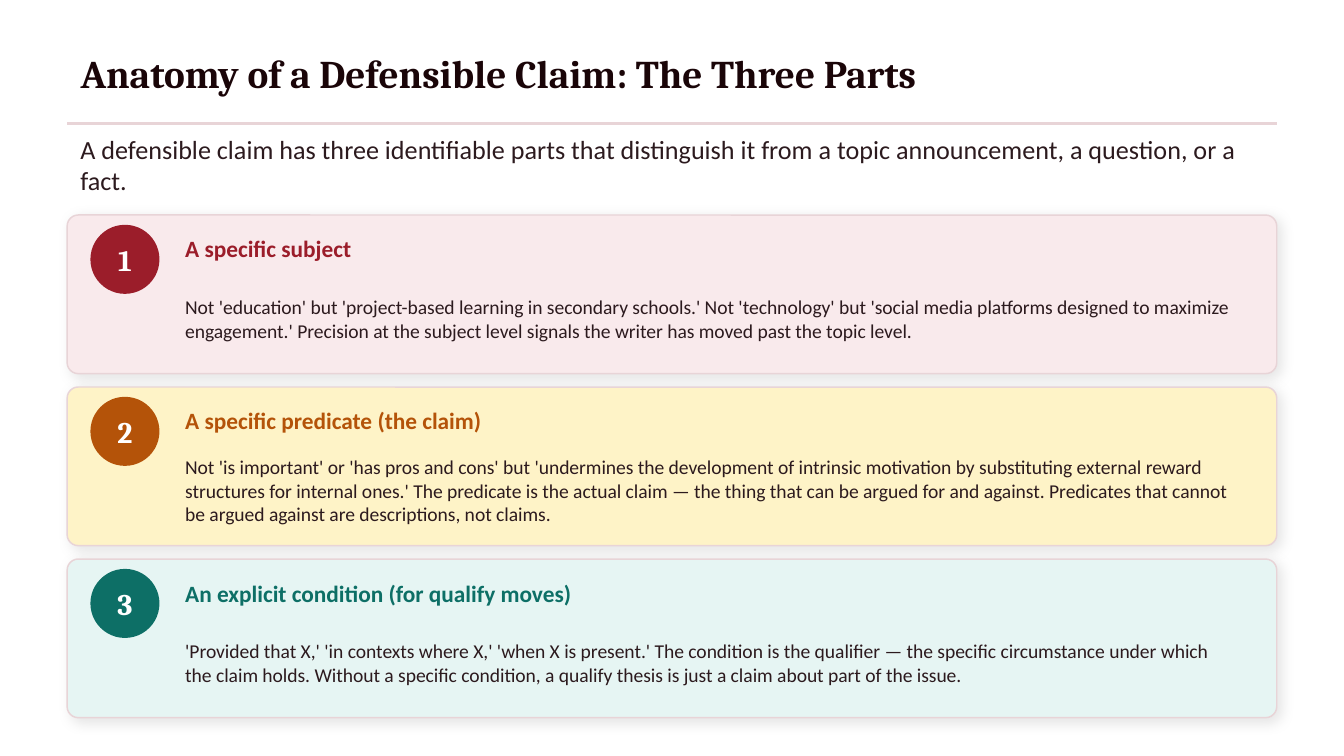
from lxml import etree
from pptx import Presentation
from pptx.dml.color import RGBColor
from pptx.enum.shapes import MSO_CONNECTOR, MSO_SHAPE
from pptx.enum.text import MSO_ANCHOR, PP_ALIGN
from pptx.oxml import parse_xml
from pptx.oxml.ns import qn
from pptx.util import Inches, Pt

STRAIGHT = MSO_CONNECTOR.STRAIGHT
ROUNDED, OVAL = MSO_SHAPE.ROUNDED_RECTANGLE, MSO_SHAPE.OVAL
MIDDLE = MSO_ANCHOR.MIDDLE
LEFT, CENTER = PP_ALIGN.LEFT, PP_ALIGN.CENTER

WHITE = RGBColor(0xFF, 0xFF, 0xFF)
TITLE_INK = RGBColor(0x1A, 0x05, 0x08)
BODY_INK = RGBColor(0x2C, 0x1A, 0x1E)
BORDER = RGBColor(0xE8, 0xD4, 0xD7)
RED, PALE_RED = RGBColor(0x9B, 0x1D, 0x2A), RGBColor(0xF9, 0xEA, 0xEC)
AMBER, PALE_AMBER = RGBColor(0xB4, 0x53, 0x09), RGBColor(0xFE, 0xF3, 0xC7)
TEAL, PALE_TEAL = RGBColor(0x0D, 0x6F, 0x66), RGBColor(0xE6, 0xF5, 0xF3)

CARD_SHADOW = (
    '<a:outerShdw xmlns:a="http://schemas.openxmlformats.org/drawingml/2006/main" '
    f'blurRad="{Pt(7)}" dist="{Pt(2)}" dir="2700000" algn="bl" rotWithShape="0">'
    '<a:srgbClr val="000000"><a:alpha val="9000"/></a:srgbClr></a:outerShdw>'
)

PARTS = [
    ("A specific subject", RED, PALE_RED,
     "Not 'education' but 'project-based learning in secondary schools.' "
     "Not 'technology' but 'social media platforms designed to maximize engagement.' "
     "Precision at the subject level signals the writer has moved past the topic level."),
    ("A specific predicate (the claim)", AMBER, PALE_AMBER,
     "Not 'is important' or 'has pros and cons' but 'undermines the development of "
     "intrinsic motivation by substituting external reward structures for internal ones.' "
     "The predicate is the actual claim — the thing that can be argued for and against. "
     "Predicates that cannot be argued against are descriptions, not claims."),
    ("An explicit condition (for qualify moves)", TEAL, PALE_TEAL,
     "'Provided that X,' 'in contexts where X,' 'when X is present.' "
     "The condition is the qualifier — the specific circumstance under which the claim holds. "
     "Without a specific condition, a qualify thesis is just a claim about part of the issue."),
]


def write_text(shape, text, size, font, color, bold=False, align=LEFT):
    frame = shape.text_frame
    frame.word_wrap = True
    frame.vertical_anchor = MIDDLE
    para = frame.paragraphs[0]
    para.alignment = align
    span = para.add_run()
    span.text = text
    span.font.size = Pt(size)
    span.font.name = font
    span.font.bold = bold
    span.font.color.rgb = color


def add_panel(kind, left, top, width, height, fill, line, line_width):
    panel = slide.shapes.add_shape(
        kind, Inches(left), Inches(top), Inches(width), Inches(height))
    panel.shadow.inherit = False
    panel.fill.solid()
    panel.fill.fore_color.rgb = fill
    panel.line.color.rgb = line
    panel.line.width = Pt(line_width)
    return panel


# Widescreen page, 16:9
deck = Presentation()
deck.slide_width = Inches(10)
deck.slide_height = Inches(10) * 9 // 16
slide = deck.slides.add_slide(deck.slide_layouts[5])

# Title
title = slide.shapes.title
title.left, title.top = Inches(0.5), Inches(0.22)
title.width, title.height = Inches(9), Inches(0.65)
write_text(title, "Anatomy of a Defensible Claim: The Three Parts",
           21, "Cambria", TITLE_INK, bold=True)

# Rule under the title
rule = slide.shapes.add_connector(
    STRAIGHT, Inches(0.5), Inches(0.92), Inches(9.5), Inches(0.92))
rule.line.color.rgb = BORDER
rule.line.width = Pt(1.2)
etree.SubElement(rule._element.spPr, qn("a:effectLst"))

# Introduction
intro = slide.shapes.add_textbox(Inches(0.5), Inches(1), Inches(9), Inches(0.45))
write_text(intro, "A defensible claim has three identifiable parts that distinguish it "
           "from a topic announcement, a question, or a fact.", 14, "Calibri", BODY_INK)

# One card per part of the claim
for index, (heading, accent, tint, detail) in enumerate(PARTS):
    top = 1.6 + index * 1.28
    card = add_panel(ROUNDED, 0.5, top, 9, 1.18, tint, BORDER, 0.8)
    card.adjustments[0] = 0.07
    card._element.spPr.find(qn("a:effectLst")).append(parse_xml(CARD_SHADOW))

    badge = add_panel(OVAL, 0.68, top + 0.08, 0.5, 0.5, accent, accent, 1)
    badge.text_frame.margin_left = badge.text_frame.margin_right = 0
    write_text(badge, str(index + 1), 16, "Cambria", WHITE, bold=True, align=CENTER)

    heading_box = slide.shapes.add_textbox(
        Inches(1.28), Inches(top + 0.08), Inches(8), Inches(0.34))
    write_text(heading_box, heading, 12.5, "Calibri", accent, bold=True)

    detail_box = slide.shapes.add_textbox(
        Inches(1.28), Inches(top + 0.44), Inches(8), Inches(0.66))
    write_text(detail_box, detail, 10.5, "Calibri", BODY_INK)

deck.save("out.pptx")
